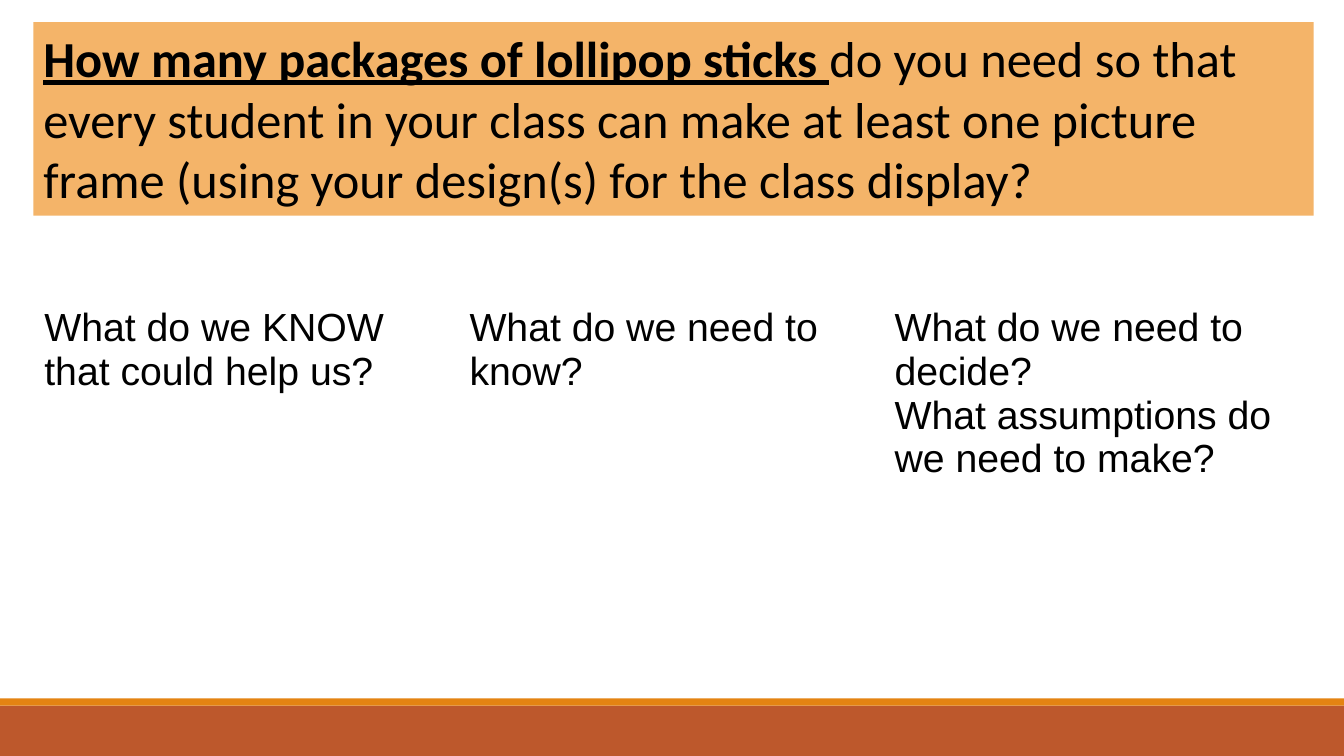
from dataclasses import dataclass

from pptx import Presentation
from pptx.dml.color import RGBColor
from pptx.enum.shapes import MSO_SHAPE as Shape
from pptx.enum.text import MSO_ANCHOR as Anchor, MSO_AUTO_SIZE as AutoSize, PP_ALIGN as Align
from pptx.util import Inches, Pt


@dataclass(frozen=True)
class Theme:
    rust: str = "BD582C"
    orange: str = "E48312"
    peach: str = "F4B469"
    text: str = "000000"
    title_font: str = "Calibri"
    body_font: str = "Arial"
    title_size: int = 36
    body_size: int = 28


class SlideBuilder:
    def __init__(self, slide, theme):
        self.s = slide
        self.theme = theme

    def style(self, r, font, size):
        r.font.name = font
        r.font.size = Pt(size)
        r.font.color.rgb = RGBColor.from_string(self.theme.text)

    def band(self, top, height, color):
        sp = self.s.shapes.add_shape(
            Shape.RECTANGLE, 0, Inches(top), Inches(13.33), Inches(height))
        sp.shadow.inherit = False
        sp.fill.solid()
        sp.fill.fore_color.rgb = RGBColor.from_string(color)
        sp.line.fill.background()

    def title(self, left, top, width, height, emphasis, rest):
        """Fill the title, with its opening words bold and underlined."""
        sp = self.s.shapes.title
        sp.left, sp.top = Inches(left), Inches(top)
        sp.width, sp.height = Inches(width), Inches(height)
        sp.fill.solid()
        sp.fill.fore_color.rgb = RGBColor.from_string(self.theme.peach)
        tf = sp.text_frame
        tf.word_wrap = True
        tf.auto_size = AutoSize.NONE
        tf.vertical_anchor = Anchor.TOP
        p = tf.paragraphs[0]
        p.alignment = Align.LEFT
        for text, strong in ((emphasis, True), (rest, False)):
            r = p.add_run()
            r.text = text
            self.style(r, self.theme.title_font, self.theme.title_size)
            r.font.bold = r.font.underline = strong

    def table(self, left, top, width, row_height, rows):
        """Add an unfilled table with equal columns."""
        frame = self.s.shapes.add_table(
            len(rows), len(rows[0]), Inches(left), Inches(top),
            Inches(width), Inches(row_height * len(rows)))
        table = frame.table
        table.first_row = table.horz_banding = False
        for i, row in enumerate(rows):
            for j, text in enumerate(row):
                cell = table.cell(i, j)
                cell.fill.background()
                cell.text_frame.text = text
                for p in cell.text_frame.paragraphs:
                    for r in p.runs:
                        self.style(r, self.theme.body_font, self.theme.body_size)


def main():
    prs = Presentation()
    prs.slide_width, prs.slide_height = Inches(13.33), Inches(7.5)
    theme = Theme()
    title_only = prs.slide_layouts[5]
    builder = SlideBuilder(prs.slides.add_slide(title_only), theme)

    builder.band(7, 0.5, theme.rust)
    builder.band(6.93, 0.07, theme.orange)
    builder.title(
        0.33, 0.22, 12.7, 1.92,
        "How many packages of lollipop sticks ",
        "do you need so that every student in your class can make at least one "
        "picture frame (using your design(s) for the class display?")
    questions = (
        "What do we KNOW that could help us?",
        "What do we need to know?",
        "What do we need to decide?\nWhat assumptions do we need to make?",
    )
    answers = ("",) * len(questions)
    builder.table(0.34, 2.99, 12.65, 0.41, (questions, answers))
    prs.save("out.pptx")


if __name__ == "__main__":
    main()
